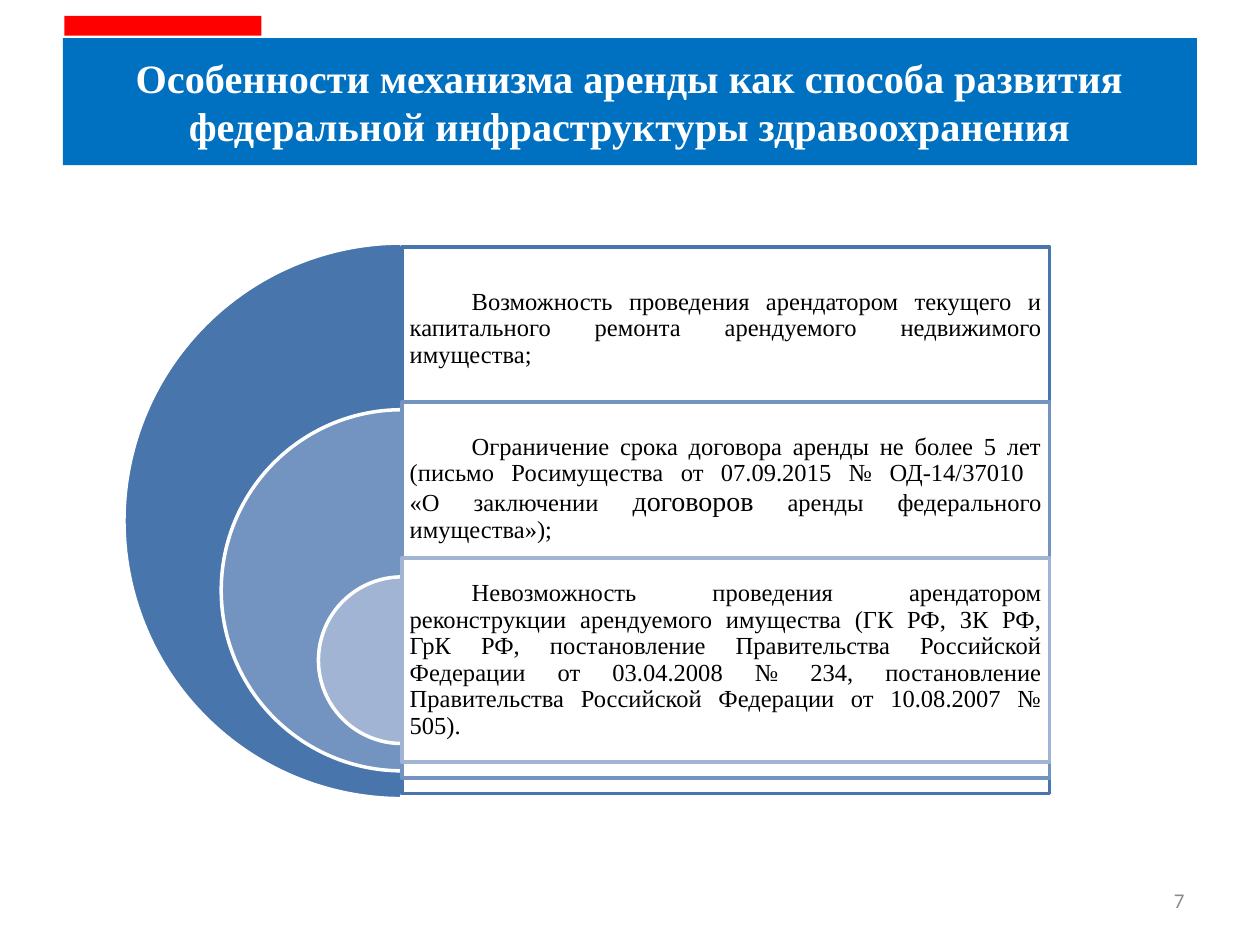
from dataclasses import dataclass

from lxml.etree import SubElement
from pptx import Presentation
from pptx.dml.color import RGBColor
from pptx.enum.shapes import MSO_SHAPE as Preset
from pptx.enum.text import MSO_ANCHOR as Anchor, PP_ALIGN as Align
from pptx.oxml.ns import qn
from pptx.util import Cm, Pt

SERIF = "Times New Roman"
AXIS_X = 8.1        # shared centre of the half circles and left edge of the panels
PANEL_WIDTH = 13.06
Run = tuple[str, float]


@dataclass
class Layer:
    color: str
    pie_top: float
    diameter: float
    panel_top: float
    panel_height: float
    text_height: float
    runs: list[Run]


LAYERS = [
    Layer("4875AC", 4.9, 11.2, 4.98, 11.02, 3.3, [
        ("Возможность проведения арендатором текущего и капитального ремонта "
         "арендуемого недвижимого имущества;", 14)]),
    Layer("7393C1", 8.26, 7.28, 8.1, 7.59, 3.51, [
        ("Ограничение срока договора аренды не более 5 лет (письмо Росимущества "
         "от 07.09.2015 № ОД-14/37010 \n«О заключении ", 14),
        ("договоров", 16),
        (" аренды федерального имущества»); ", 14)]),
    Layer("A2B4D4", 11.63, 3.36, 11.25, 4.11, 4.11, [
        ("Невозможность проведения арендатором реконструкции арендуемого имущества "
         "(ГК РФ, ЗК РФ, ГрК РФ, постановление Правительства Российской Федерации "
         "от 03.04.2008 № 234, постановление Правительства Российской Федерации "
         "от 10.08.2007 № 505).", 14)]),
]


def rgb(color: str) -> RGBColor:
    return RGBColor.from_string(color)


def add_block(slide, preset, left: float, top: float, width: float, height: float,
              fill: str, line: str | None = None, opacity: int = 100):
    shape = slide.shapes.add_shape(preset, Cm(left), Cm(top), Cm(width), Cm(height))
    shape.shadow.inherit = False
    shape.fill.solid()
    shape.fill.fore_color.rgb = rgb(fill)
    if opacity < 100:
        color = shape.fill._xPr.find(f".//{qn('a:srgbClr')}")
        SubElement(color, qn("a:alpha"), val=str(opacity * 1000))
    if line:
        shape.line.color.rgb = rgb(line)
        shape.line.width = Pt(2)
    else:
        shape.line.fill.background()
    return shape


def write(shape, runs: list[Run], *, color: str, align, font: str = SERIF,
          bold: bool = False, inset: float | None = None, indent: float = 0,
          line_spacing: float = 1.0, space_after: float = 0) -> None:
    frame = shape.text_frame
    frame.word_wrap = True
    frame.vertical_anchor = Anchor.MIDDLE
    if inset is not None:
        frame.margin_left = frame.margin_right = Cm(inset)
        frame.margin_top = frame.margin_bottom = Cm(inset)
    paragraph = frame.paragraphs[0]
    paragraph.alignment = align
    paragraph.line_spacing = line_spacing
    paragraph.space_after = Pt(space_after)
    if indent:
        properties = paragraph._p.get_or_add_pPr()
        properties.set("marL", "0")
        properties.set("indent", str(Cm(indent)))
    for text, size in runs:
        for number, part in enumerate(text.split("\n")):
            if number:
                paragraph.add_line_break()
            run = paragraph.add_run()
            run.text = part
            run.font.name = font
            run.font.size = Pt(size)
            run.font.bold = bold
            run.font.color.rgb = rgb(color)


def add_text(slide, left: float, top: float, width: float, height: float,
             runs: list[Run], **style) -> None:
    box = slide.shapes.add_textbox(Cm(left), Cm(top), Cm(width), Cm(height))
    write(box, runs, **style)


def add_layer(slide, layer: Layer) -> None:
    pie = add_block(slide, Preset.PIE, AXIS_X - layer.diameter / 2, layer.pie_top,
                    layer.diameter, layer.diameter, layer.color, "FFFFFF")
    pie.adjustments[0], pie.adjustments[1] = 54, 162    # left half: 90° to 270°
    add_block(slide, Preset.RECTANGLE, AXIS_X, layer.panel_top, PANEL_WIDTH,
              layer.panel_height, "FFFFFF", layer.color, opacity=90)
    add_text(slide, AXIS_X, layer.panel_top, PANEL_WIDTH, layer.text_height, layer.runs,
             color="000000", align=Align.JUSTIFY, inset=0.16, indent=1.25,
             line_spacing=0.9, space_after=5)


def main() -> None:
    presentation = Presentation()
    presentation.slide_width, presentation.slide_height = Cm(25.4), Cm(19.05)
    slide = presentation.slides.add_slide(presentation.slide_layouts[6])

    # Slide number
    add_text(slide, 18.2, 17.65, 5.93, 1.01, [("7", 12)],
             color="8C8C8C", align=Align.RIGHT, font="Calibri")

    # Nested half circles with their panels
    for layer in LAYERS:
        add_layer(slide, layer)

    # Title banner and red accent
    banner = add_block(slide, Preset.RECTANGLE, 1.27, 0.77, 22.86, 2.56, "0070C0")
    write(banner, [("Особенности механизма аренды как способа развития "
                    "федеральной инфраструктуры здравоохранения", 23)],
          color="FFFFFF", align=Align.CENTER, bold=True)
    add_block(slide, Preset.RECTANGLE, 1.3, 0.32, 3.97, 0.4, "FF0000")

    presentation.save("out.pptx")


if __name__ == "__main__":
    main()
